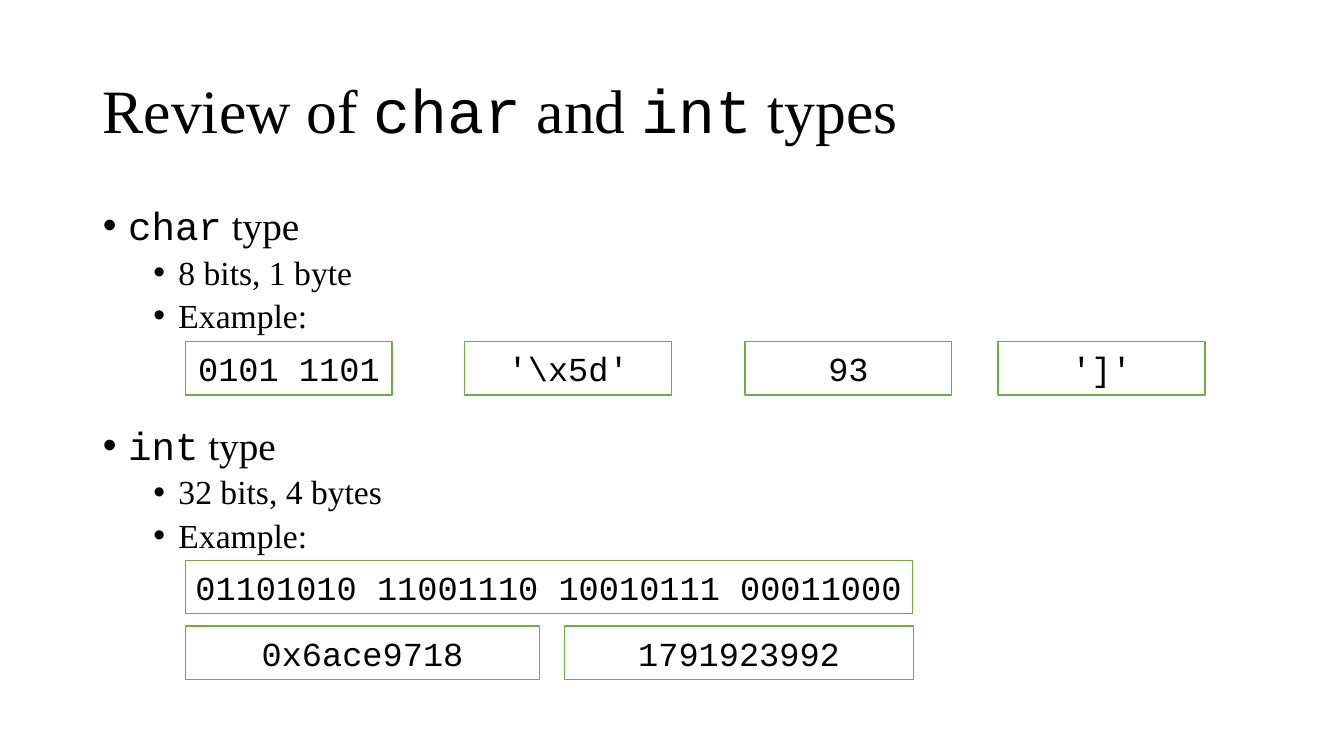
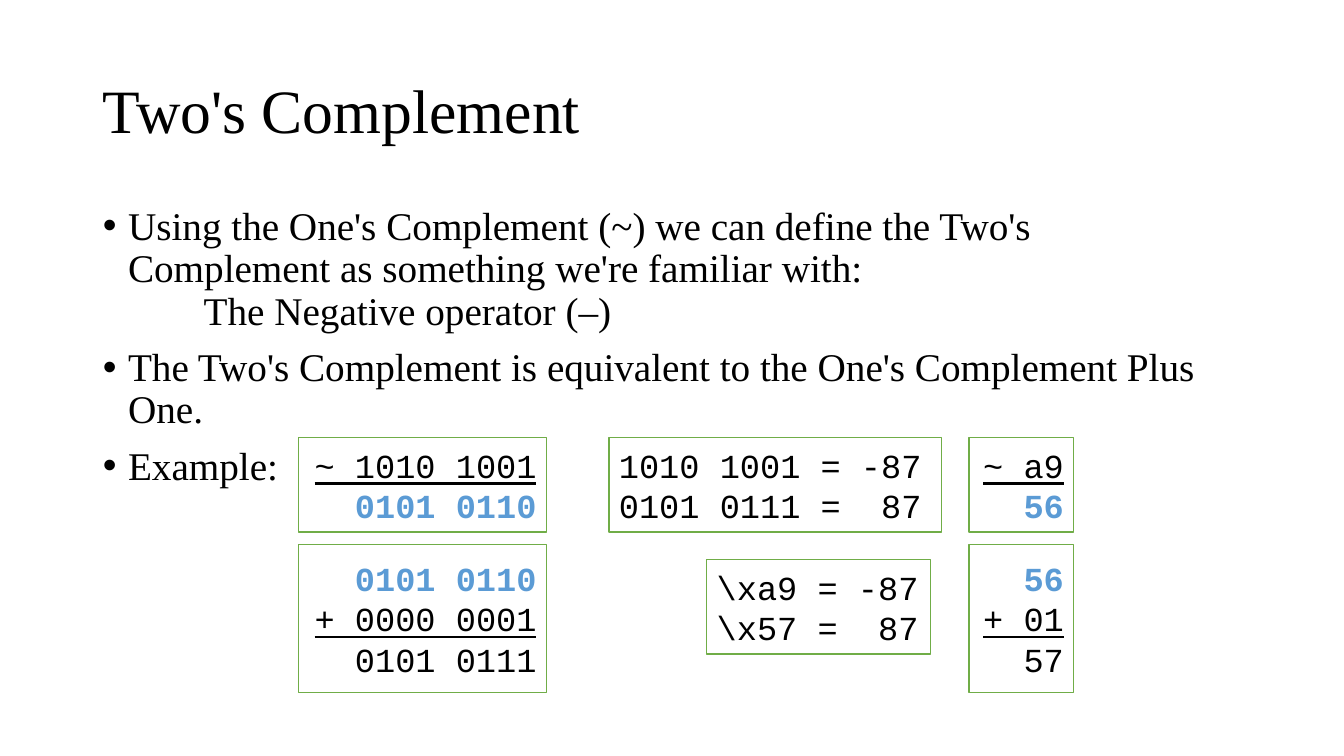
"""Builds two slides on integer types and two's complement."""
import lxml.etree
import pptx
import pptx.dml.color
import pptx.enum.shapes
import pptx.enum.text
import pptx.oxml.ns
import pptx.util

Inches, Pt = pptx.util.Inches, pptx.util.Pt
ALIGN = pptx.enum.text.PP_ALIGN
MIDDLE = pptx.enum.text.MSO_ANCHOR.MIDDLE

THEME = {
    "serif": "Times New Roman", "mono": "Courier New",
    "text": "000000", "accent": "5B9BD5", "line": "70AD47", "fill": "FFFFFF",
    "title_size": 44, "box_size": 24, "spacing": 0.9,
}
FRAMES = {0: (0.92, 0.4, 11.5, 1.45), 1: (0.92, 2, 11.5, 4.76)}
LISTS = {
    "item": {"level": 0, "size": 28, "before": 10, "margin": 0.25, "bullet": "•"},
    "spaced": {"level": 0, "size": 28, "before": 65, "margin": 0.25, "bullet": "•"},
    "sub": {"level": 1, "size": 24, "before": 5, "margin": 0.75, "bullet": "•"},
    "inset": {"level": 0, "size": 28, "before": 0, "margin": 1, "bullet": None},
}
BOX_LEFT, CELL, ROW = 1.84, 2.05, 0.53
SUM_LEFT, SUM_WIDTH, HEX_LEFT, HEX_WIDTH = 2.96, 2.46, 9.61, 1.04
TOP, STEP, TWO_LINES, THREE_LINES = 4.34, 5.4, 0.94, 1.47


def sums(left, width, value, inverse, one, result):
    """Return the inversion box and the addition box below it."""
    return [
        ((left, TOP, width, TWO_LINES), ALIGN.RIGHT,
         [("~ " + value, "rule"), (inverse, "accent")]),
        ((left, STEP, width, THREE_LINES), ALIGN.RIGHT,
         [(inverse, "accent"), ("+ " + one, "rule"), (result, "")]),
    ]


SLIDES = [
    {
        "title": "Review of `char` and `int` types",
        "body": [
            ("item", "`char` type"),
            ("sub", "8 bits, 1 byte"),
            ("sub", "Example:"),
            ("spaced", "`int` type"),
            ("sub", "32 bits, 4 bytes"),
            ("sub", "Example:"),
        ],
        "boxes": [
            ((left, 3.39, CELL, ROW), ALIGN.CENTER, [(text, "")])
            for left, text in zip((BOX_LEFT, 4.61, 7.39, 9.9),
                                  ("0101 1101", r"'\x5d'", "93", "']'"))
        ] + [
            ((BOX_LEFT, 5.56, 7.21, ROW), ALIGN.LEFT,
             [("01101010 11001110 10010111 00011000", "")]),
            ((BOX_LEFT, 6.21, 3.51, ROW), ALIGN.CENTER, [("0x6ace9718", "")]),
            ((5.6, 6.21, 3.46, ROW), ALIGN.CENTER, [("1791923992", "")]),
        ],
    },
    {
        "title": "Two's Complement",
        "body": [
            ("item", "Using the One's Complement (~) we can define the Two's "
                     "Complement as something we're familiar with:"),
            ("inset", "The Negative operator (–)"),
            ("item", "The Two's Complement is equivalent to the One's "
                     "Complement Plus One."),
            ("item", "Example:"),
        ],
        "boxes": [
            *sums(SUM_LEFT, SUM_WIDTH, "1010 1001", "0101 0110", "0000 0001", "0101 0111"),
            ((6.04, TOP, 3.3, TWO_LINES), ALIGN.LEFT,
             [("1010 1001 = -87", ""), ("0101 0111 =  87", "")]),
            ((7.01, 5.55, 2.22, TWO_LINES), ALIGN.LEFT,
             [(r"\xa9 = -87", ""), (r"\x57 =  87", "")]),
            *sums(HEX_LEFT, HEX_WIDTH, "a9", "56", "01", "57"),
        ],
    },
]


def rgb(name):
    """Return a theme colour."""
    return pptx.dml.color.RGBColor.from_string(THEME[name])


def add_run(p, text, face, size, color="text"):
    """Add a run in a theme face and colour, and return it."""
    r = p.add_run()
    r.text = text
    r.font.name, r.font.size = THEME[face], Pt(size)
    r.font.color.rgb = rgb(color)
    return r


def add_marked(p, text, size):
    """Add text whose backquoted parts are monospaced."""
    p.line_spacing = THEME["spacing"]
    for i, part in enumerate(text.split("`")):
        if part:
            add_run(p, part, "mono" if i % 2 else "serif", size)


def paragraphs(tf, items):
    """Yield a paragraph of the frame with each item."""
    for i, item in enumerate(items):
        yield (tf.add_paragraph() if i else tf.paragraphs[0]), item


def set_bullet(p, margin, bullet):
    """Set the hanging indent and the bullet."""
    pPr = p._p.get_or_add_pPr()
    pPr.set("marL", str(Inches(margin)))
    pPr.set("indent", str(Inches(-0.25 if bullet else 0)))
    qn = pptx.oxml.ns.qn
    if bullet:
        lxml.etree.SubElement(pPr, qn("a:buFont")).set("typeface", "Arial")
        lxml.etree.SubElement(pPr, qn("a:buChar")).set("char", bullet)
    else:
        lxml.etree.SubElement(pPr, qn("a:buNone"))


def fill_placeholders(slide, title, body):
    """Write the title and the bulleted list."""
    for sp in slide.placeholders:
        sp.text_frame.auto_size = pptx.enum.text.MSO_AUTO_SIZE.NONE
        sp.text_frame.word_wrap = True
    tf = slide.shapes.title.text_frame
    tf.vertical_anchor = MIDDLE
    tf.paragraphs[0].alignment = ALIGN.LEFT
    add_marked(tf.paragraphs[0], title, THEME["title_size"])
    for p, (kind, text) in paragraphs(slide.placeholders[1].text_frame, body):
        style = LISTS[kind]
        p.level = style["level"]
        p.space_before = Pt(style["before"])
        add_marked(p, text, style["size"])
        set_bullet(p, style["margin"], style["bullet"])


def add_box(slide, frame, align, lines):
    """Add an outlined box of monospaced lines."""
    sp = slide.shapes.add_shape(
        pptx.enum.shapes.MSO_SHAPE.RECTANGLE, *map(Inches, frame))
    sp.shadow.inherit = False
    sp.fill.solid()
    sp.fill.fore_color.rgb = rgb("fill")
    sp.line.color.rgb = rgb("line")
    sp.line.width = Pt(1)
    tf = sp.text_frame
    tf.word_wrap = True
    tf.vertical_anchor = MIDDLE
    for p, (text, mark) in paragraphs(tf, lines):
        p.alignment = align
        accent = mark == "accent"
        r = add_run(p, text, "mono", THEME["box_size"], "accent" if accent else "text")
        r.font.bold = accent
        r.font.underline = mark == "rule"


def main():
    """Build and save the presentation."""
    prs = pptx.Presentation()
    prs.slide_width, prs.slide_height = Inches(13.33), Inches(7.5)
    layout = prs.slide_layouts[1]
    for sp in layout.placeholders:
        frame = FRAMES.get(sp.placeholder_format.idx)
        if frame:
            sp.left, sp.top, sp.width, sp.height = map(Inches, frame)
    for content in SLIDES:
        slide = prs.slides.add_slide(layout)
        fill_placeholders(slide, content["title"], content["body"])
        for box in content["boxes"]:
            add_box(slide, *box)
    prs.save("out.pptx")


if __name__ == "__main__":
    main()
